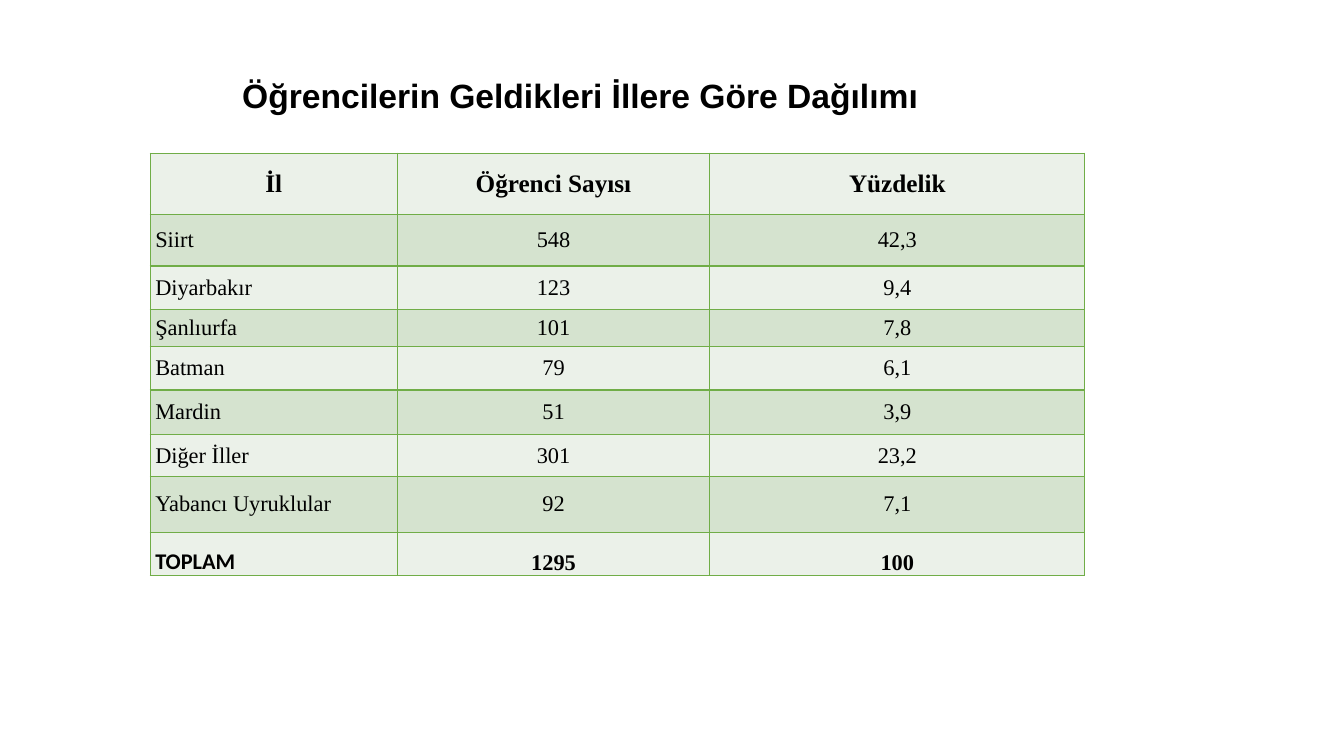
import pptx
import pptx.dml.color
import pptx.enum.text
import pptx.oxml
import pptx.oxml.ns
import pptx.util

Inches = pptx.util.Inches
Align = pptx.enum.text.PP_ALIGN
Anchor = pptx.enum.text.MSO_ANCHOR

HEADING = "Öğrencilerin Geldikleri İllere Göre Dağılımı"
PROVINCES = [
    ("İl", "Öğrenci Sayısı", "Yüzdelik"),
    ("Siirt", "548", "42,3"),
    ("Diyarbakır", "123", "9,4"),
    ("Şanlıurfa", "101", "7,8"),
    ("Batman", "79", "6,1"),
    ("Mardin", "51", "3,9"),
    ("Diğer İller", "301", "23,2"),
    ("Yabancı Uyruklular", "92", "7,1"),
    ("TOPLAM", "1295", "100"),
]
COLUMN_WIDTHS = [2.45, 3.1, 3.72]
ROW_HEIGHTS = [0.61, 0.51, 0.43, 0.37, 0.43, 0.44, 0.42, 0.55, 0.43]
BANDS = ["EBF1E9", "D5E3CF"]
BORDER = "70AD47"
INK = "000000"
CELL_MARGINS = {
    "margin_left": Inches(0.05),
    "margin_right": Inches(0.05),
    "margin_top": 0,
    "margin_bottom": 0,
}


def rgb(code):
    return pptx.dml.color.RGBColor.from_string(code)


def write(frame, text, align, face, size, bold):
    paragraph = frame.paragraphs[0]
    paragraph.alignment = align
    run = paragraph.add_run()
    run.text = text
    run.font.color.rgb = rgb(INK)
    font_values = {"name": face, "size": pptx.util.Pt(size), "bold": bold}
    for key, value in font_values.items():
        setattr(run.font, key, value)


def outline(cell):
    properties = cell._tc.get_or_add_tcPr()
    for side in ("lnL", "lnR", "lnT", "lnB"):
        properties.append(pptx.oxml.parse_xml(
            f'<a:{side} {pptx.oxml.ns.nsdecls("a")} w="12700"><a:solidFill>'
            f'<a:srgbClr val="{BORDER}"/></a:solidFill></a:{side}>'))


def add_heading(slide):
    heading = slide.shapes.add_textbox(
        Inches(1.74), Inches(0.69), Inches(8.03), Inches(0.5))
    heading.text_frame.word_wrap = True
    write(heading.text_frame, HEADING, Align.CENTER, "Arial", 24, True)


def add_distribution(slide):
    distribution = slide.shapes.add_table(
        len(PROVINCES), len(COLUMN_WIDTHS), Inches(1.49), Inches(1.52),
        Inches(sum(COLUMN_WIDTHS)), Inches(sum(ROW_HEIGHTS))).table
    distribution.first_row = False
    distribution.horz_banding = False
    for column, width in zip(distribution.columns, COLUMN_WIDTHS):
        column.width = Inches(width)
    for row, height in zip(distribution.rows, ROW_HEIGHTS):
        row.height = Inches(height)

    total_row = len(PROVINCES) - 1
    for r, province in enumerate(PROVINCES):
        header, total = r == 0, r == total_row
        for c, text in enumerate(province):
            cell = distribution.cell(r, c)
            for key, value in CELL_MARGINS.items():
                setattr(cell, key, value)
            cell.vertical_anchor = Anchor.BOTTOM if total else Anchor.MIDDLE
            outline(cell)
            cell.fill.solid()
            cell.fill.fore_color.rgb = rgb(BANDS[r % 2])
            write(cell.text_frame, text,
                  Align.CENTER if header or c else Align.LEFT,
                  "Calibri" if total and c == 0 else "Times New Roman",
                  18 if header else 16, header or total)


def main():
    deck = pptx.Presentation()
    deck.slide_width = Inches(13.33)
    deck.slide_height = Inches(7.5)
    slide = deck.slides.add_slide(deck.slide_layouts[6])
    add_heading(slide)
    add_distribution(slide)
    deck.save("out.pptx")


if __name__ == "__main__":
    main()
